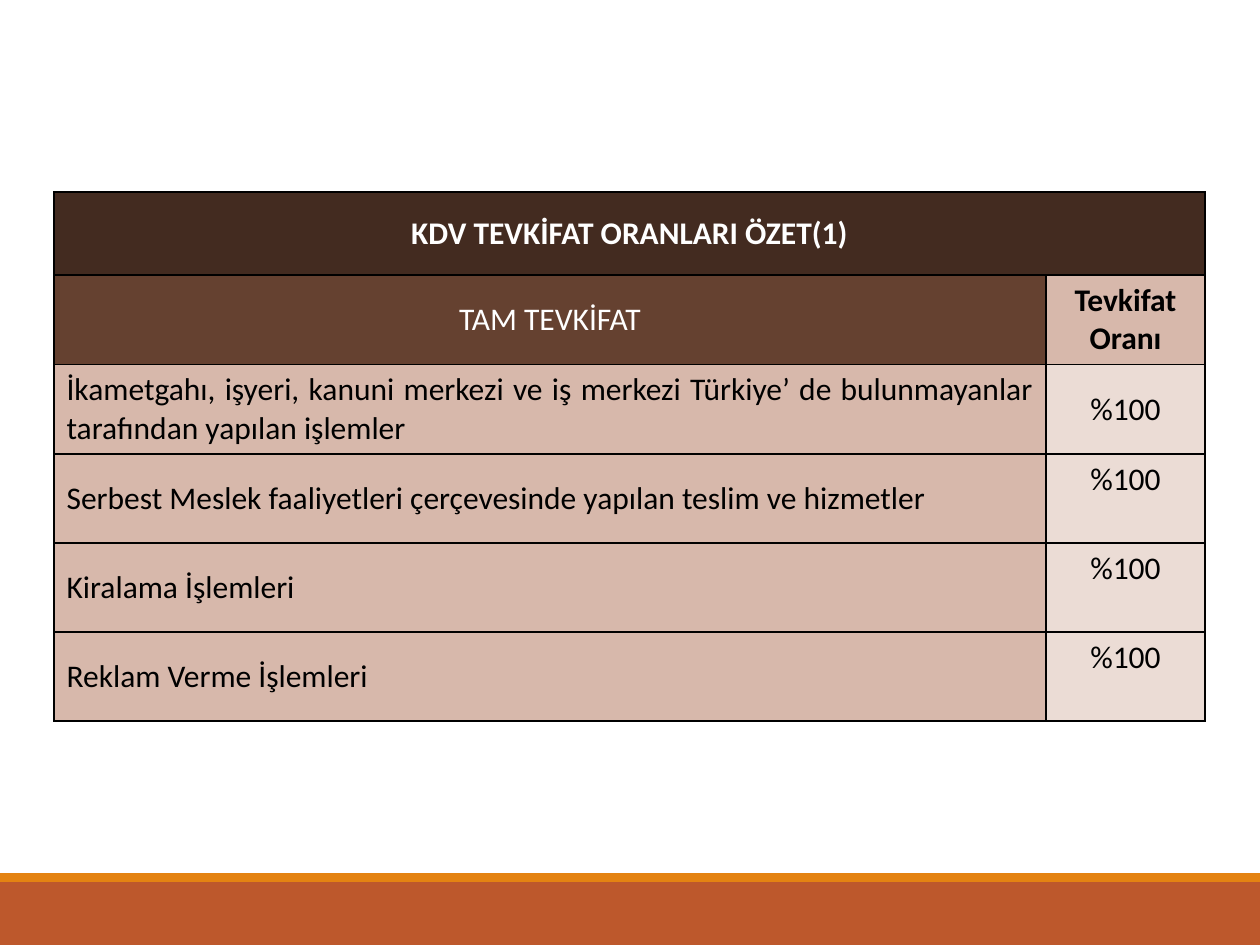
from dataclasses import dataclass
from pptx import Presentation
from pptx.dml.color import RGBColor as Rgb
from pptx.enum.shapes import MSO_SHAPE as Shape
from pptx.enum.text import MSO_ANCHOR as Anchor, PP_ALIGN as Align
from pptx.oxml import parse_xml
from pptx.oxml.ns import nsdecls
from pptx.util import Emu, Pt


@dataclass(frozen=True)
class Theme:
    font: str = "Calibri"
    size: int = 18
    rust: str = "BD582C"
    orange: str = "E48312"
    dark: str = "432B20"
    brown: str = "654130"
    rose: str = "D7B8AB"
    pale: str = "EBDCD5"
    white: str = "FFFFFF"
    black: str = "000000"


def px(num):
    return Emu(round(num * 914400 / 126))


class Deck:
    """Draws styled elements on the current slide."""

    def __init__(self, theme):
        self.theme = theme
        self.prs = Presentation()
        self.prs.slide_width, self.prs.slide_height = px(1260), px(945)
        self.slide = self.prs.slides.add_slide(self.prs.slide_layouts[6])

    def band(self, top, high, color):
        box = self.slide.shapes.add_shape(Shape.RECTANGLE, 0, px(top), px(1260), px(high))
        box.shadow.inherit = False
        box.fill.solid()
        box.fill.fore_color.rgb = Rgb.from_string(color)
        box.line.fill.background()

    def grid(self, left, top, cols, rows):
        frame = self.slide.shapes.add_table(
            len(rows), len(cols), px(left), px(top), px(sum(cols)), px(sum(rows)))
        table = frame.table
        for col, wide in zip(table.columns, cols):
            col.width = px(wide)
        for row, high in zip(table.rows, rows):
            row.height = px(high)
        for cell in table.iter_cells():
            self.edge(cell)
        return table

    def edge(self, cell):
        props = cell._tc.get_or_add_tcPr()
        for side in "LRTB":
            props.append(parse_xml(
                f'<a:ln{side} {nsdecls("a")} w="{Pt(1)}"><a:solidFill>'
                f'<a:srgbClr val="{self.theme.black}"/></a:solidFill></a:ln{side}>'))

    def cell(self, cell, text, fill, color, align=Align.CENTER, bold=False, anchor=Anchor.MIDDLE):
        cell.fill.solid()
        cell.fill.fore_color.rgb = Rgb.from_string(fill)
        cell.vertical_anchor = anchor
        para = cell.text_frame.paragraphs[0]
        para.alignment = align
        run = para.add_run()
        run.text = text
        font = run.font
        font.name, font.size, font.bold = self.theme.font, Pt(self.theme.size), bold
        font.color.rgb = Rgb.from_string(color)


def main():
    look = Theme()
    deck = Deck(look)
    deck.band(882, 63, look.rust)
    deck.band(873, 9, look.orange)

    items = [
        "İkametgahı, işyeri, kanuni merkezi ve iş merkezi Türkiye’ de bulunmayanlar "
        "tarafından yapılan işlemler",
        "Serbest Meslek faaliyetleri çerçevesinde yapılan teslim ve hizmetler",
        "Kiralama İşlemleri",
        "Reklam Verme İşlemleri",
    ]
    table = deck.grid(54, 192, [992, 159], [83] + [89] * (len(items) + 1))
    title = table.cell(0, 0)
    title.merge(table.cell(0, 1))
    deck.cell(title, "KDV TEVKİFAT ORANLARI ÖZET(1)", look.dark, look.white, bold=True)
    deck.cell(table.cell(1, 0), "TAM TEVKİFAT", look.brown, look.white)
    deck.cell(table.cell(1, 1), "Tevkifat Oranı", look.rose, look.black,
              bold=True, anchor=Anchor.TOP)
    for row, item in enumerate(items, 2):
        deck.cell(table.cell(row, 0), item, look.rose, look.black, Align.JUSTIFY)
        deck.cell(table.cell(row, 1), "%100", look.pale, look.black,
                  anchor=Anchor.MIDDLE if row == 2 else Anchor.TOP)

    deck.prs.save("out.pptx")


if __name__ == "__main__":
    main()
